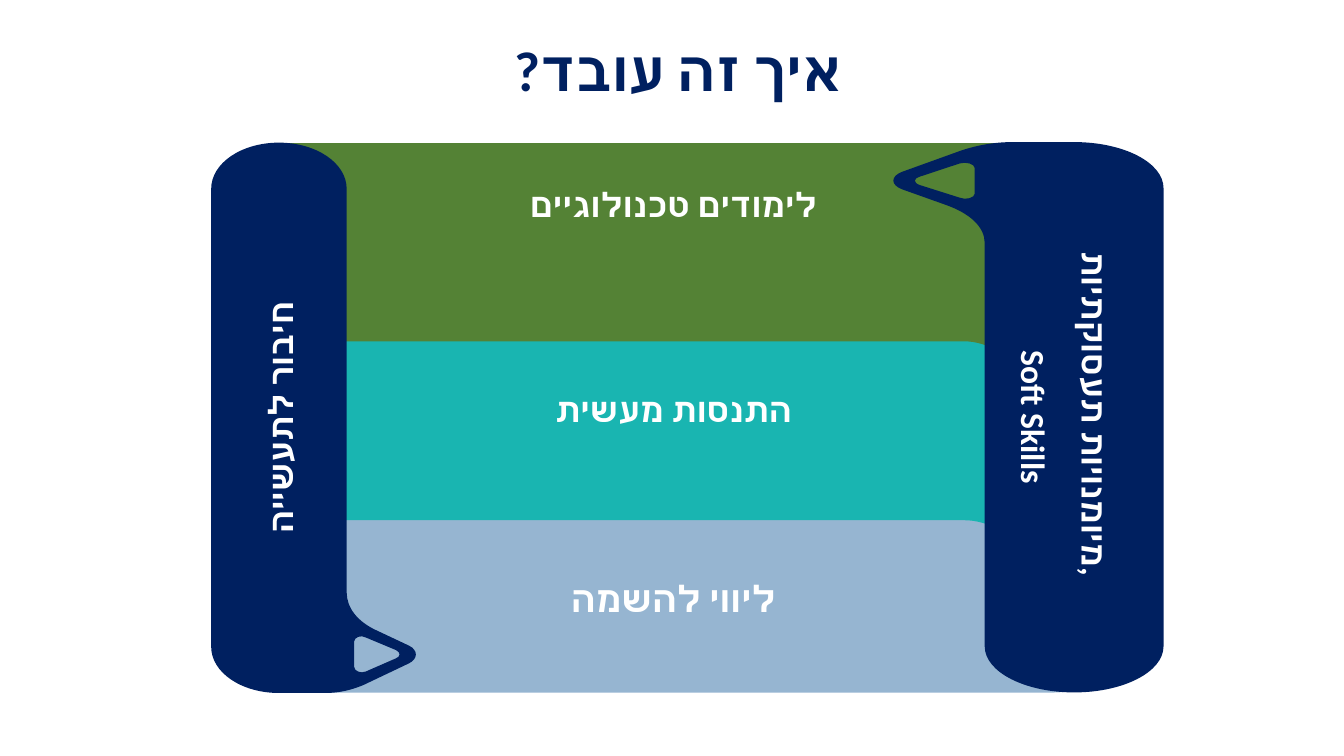
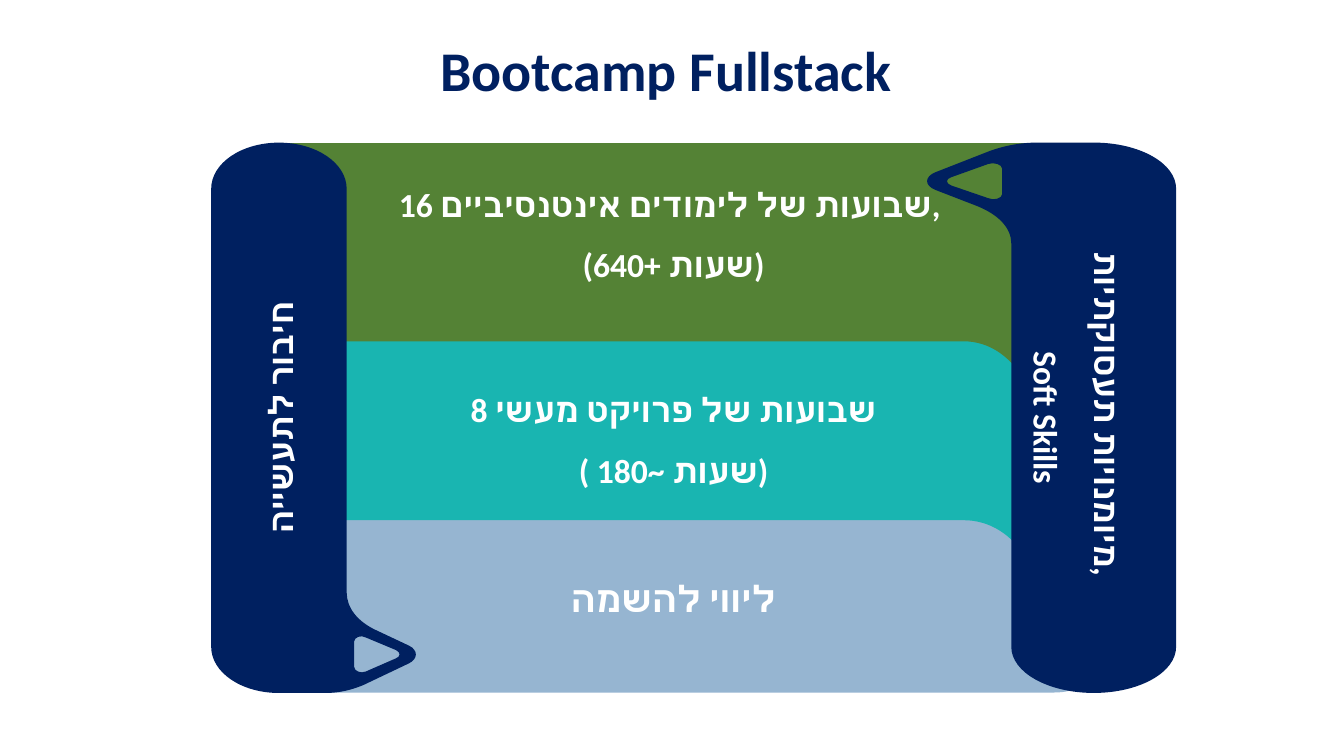
"""Build two slides that explain a training course as folded, interlocking ribbons."""
from dataclasses import dataclass

from lxml.etree import SubElement
from pptx import Presentation
from pptx.dml.color import RGBColor as Rgb
from pptx.enum.text import MSO_ANCHOR as Anchor, PP_ALIGN as Align
from pptx.oxml.ns import qn
from pptx.shapes.autoshape import Shape
from pptx.slide import Slide
from pptx.text.text import TextFrame as Frame
from pptx.util import Inches, Pt

COLORS = {"navy": "002060", "green": "548235", "teal": "19B5B1",
          "sky": "96B5D1", "white": "FFFFFF"}
FONT = "Calibri"

Path = list[tuple[float, ...]]

FOLD: Path = [
    (91.6, 0), (8.4, 0), (3.7, 0, 0, 14.9, 0, 33.1), (0, 51.3, 3.7, 66.2, 8.4, 66.2),
    (81.7, 66.2), (84.5, 66.2, 87, 71.4, 88.6, 80.7), (91.4, 96.7),
    (91.8, 98.9, 92.4, 100, 93, 100), (93.6, 100, 94.2, 98.9, 94.6, 96.7),
    (98.5, 74.7), (99.4, 69.1, 100, 62.8, 100, 55.8), (100, 33.1),
    (100, 14.9, 96.3, 0, 91.6, 0),
]
HOLE: Path = [
    (96.1, 75.5), (93.7, 90.3), (93.4, 92.6, 92.6, 92.6, 92.2, 90.3), (89.9, 75.5),
    (89.4, 73.2, 89.9, 69.9, 90.6, 69.9), (95.3, 69.9), (96, 69.9, 96.5, 73.2, 96.1, 75.5),
]
PILL: Path = [
    (91.6, 0), (8.4, 0), (3.7, 0, 0, 22.5, 0, 50), (0, 77.5, 3.7, 100, 8.4, 100),
    (91.6, 100), (96.3, 100, 100, 77.5, 100, 50), (100, 22.5, 96.3, 0, 91.6, 0),
]


@dataclass(frozen=True)
class Band:
    """A ribbon with its box, text and folding direction."""
    box: tuple[float, float, float, float]
    color: str
    lines: list[str]
    top: float = 0.28
    size: int = 24
    space: float = 1.5
    turn: int = 0
    flip: bool = False
    paths: tuple[Path, ...] = (FOLD, HOLE)


@dataclass(frozen=True)
class Page:
    """The parts in which one slide differs from the other."""
    title: str
    study: list[str]
    work: list[str]
    skill: tuple[float, float, float, float]


PAGES = [
    Page("איך זה עובד? ", ["לימודים טכנולוגיים"], ["התנסות מעשית"],
         (7.47, 2.8, 5.46, 2.68)),
    Page(" Bootcamp Fullstack",
         ["16 שבועות של לימודים אינטנסיביים, ", "(640+ שעות)"],
         ["8 שבועות של פרויקט מעשי", "( 180~ שעות)"],
         (7.7, 2.91, 5.46, 2.47)),
]


def write(frame: Frame, lines: list[str], size: int, color: str,
          space: float, rtl: bool = False) -> None:
    """Fill a frame with centred bold lines."""
    frame.word_wrap = True
    frame.text = "\n".join(lines)
    for para in frame.paragraphs:
        para.alignment = Align.CENTER
        para.line_spacing = space
        if rtl:
            para._p.get_or_add_pPr().set("rtl", "1")
        for run in para.runs:
            font = run.font
            font.name, font.size, font.bold = FONT, Pt(size), True
            font.color.rgb = Rgb.from_string(COLORS[color])
            SubElement(run._r.get_or_add_rPr(), qn("a:cs"), typeface=FONT)


def scale(part: tuple[float, ...], band: Band) -> list[tuple[int, int]]:
    """Map percent points to lengths inside the box of a ribbon."""
    wide, high = band.box[2:]
    return [(Inches(wide * (100 - x if band.flip else x) / 100), Inches(high * y / 100))
            for x, y in zip(part[::2], part[1::2])]


def bend(shape: Shape, band: Band) -> None:
    """Turn the straight sides that stand for curves into cubic curves."""
    parts = [part for path in band.paths for part in path[1:]]
    for side, part in zip(list(shape._element.iter(qn("a:lnTo"))), parts):
        if len(part) == 2:
            continue
        side.clear()
        curve = side.makeelement(qn("a:cubicBezTo"))
        for x, y in scale(part, band):
            SubElement(curve, qn("a:pt"), x=str(int(x)), y=str(int(y)))
        side.getparent().replace(side, curve)


def draw(slide: Slide, band: Band) -> None:
    """Draw one ribbon with its text."""
    left, top = Inches(band.box[0]), Inches(band.box[1])
    pen = None
    for path in band.paths:
        ends = [scale(part[-2:], band)[0] for part in path]
        dots = [(left + x, top + y) for x, y in ends]
        if pen is None:
            pen = slide.shapes.build_freeform(*dots[0])
        else:
            pen.move_to(*dots[0])
        pen.add_line_segments(dots[1:], close=True)
    shape = pen.convert_to_shape()
    bend(shape, band)
    shape.rotation = band.turn
    shape.shadow.inherit = False
    shape.fill.solid()
    shape.fill.fore_color.rgb = Rgb.from_string(COLORS[band.color])
    shape.line.fill.background()
    frame = shape.text_frame
    frame.vertical_anchor = Anchor.TOP
    frame.margin_left = frame.margin_right = frame.margin_bottom = Inches(0.04)
    frame.margin_top = Inches(band.top)
    write(frame, band.lines, band.size, "white", band.space)


def build(slide: Slide, page: Page) -> None:
    """Put the title and the five ribbons on a slide."""
    box = slide.shapes.add_textbox(Inches(0.14), Inches(0.38), Inches(13.05), Inches(0.69))
    box.text_frame.vertical_anchor = Anchor.MIDDLE
    write(box.text_frame, [page.title], 40, "navy", 0.9, rtl=True)
    bands = [
        Band((2.14, 5.09, 9.08, 1.78), "sky", ["ליווי להשמה"],
             top=0.63, size=26, space=1.0, paths=(PILL,)),
        Band((2.14, 3.38, 9.08, 2.69), "teal", page.work),
        Band((2.14, 1.42, 9.08, 2.97), "green", page.study, top=0.2),
        Band((0.38, 3.13, 5.46, 2.03), "navy", ["חיבור לתעשייה"], turn=270, flip=True),
        Band(page.skill, "navy", ["מיומנויות תעסוקתיות, ", "Soft Skills"],
             turn=90, flip=True),
    ]
    for band in bands:
        draw(slide, band)


def main() -> None:
    """Create and save the deck."""
    deck = Presentation()
    deck.slide_width, deck.slide_height = Inches(13.33), Inches(7.5)
    for page in PAGES:
        build(deck.slides.add_slide(deck.slide_layouts[6]), page)
    deck.save("out.pptx")


if __name__ == "__main__":
    main()
